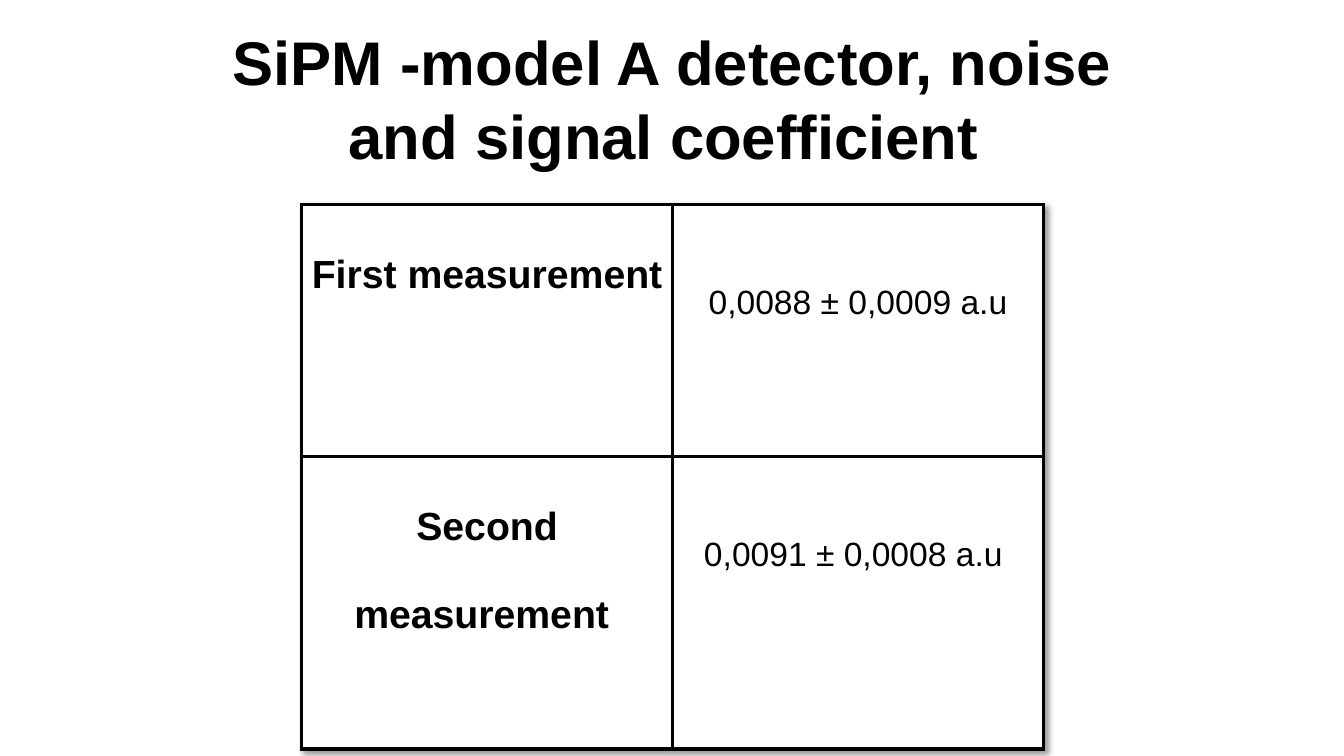
from lxml.etree import fromstring
from pptx import Presentation
from pptx.dml.color import RGBColor
from pptx.enum.text import MSO_ANCHOR, PP_ALIGN
from pptx.oxml.ns import nsdecls
from pptx.util import Inches, Pt

BLACK = RGBColor(0, 0, 0)
WHITE = RGBColor(255, 255, 255)

TITLE = "SiPM -model A detector, noise and signal coefficient "
ROWS = [
    ("First measurement", "0,0088 ± 0,0009 a.u"),
    ("Second measurement ", "0,0091 ± 0,0008 a.u "),
]
HEIGHTS = (2.5, 2.9)
WIDTH = 3.68


def write(frame, text, size, bold=False, space=1.0):
    para = frame.paragraphs[0]
    para.alignment = PP_ALIGN.CENTER
    para.line_spacing = space
    run = para.add_run()
    run.text = text
    run.font.name = "Arial"
    run.font.size = Pt(size)
    run.font.bold = bold
    run.font.color.rgb = BLACK


class Deck:
    def __init__(self):
        self.show = Presentation()
        self.show.slide_width = Inches(13.33)
        self.show.slide_height = Inches(7.5)
        self.slide = self.show.slides.add_slide(self.show.slide_layouts[5])

    def title(self, text, left, top, width, height):
        box = self.slide.shapes.title
        box.left, box.top = Inches(left), Inches(top)
        box.width, box.height = Inches(width), Inches(height)
        box.text_frame.word_wrap = True
        box.text_frame.vertical_anchor = MSO_ANCHOR.MIDDLE
        write(box.text_frame, text, 44, bold=True)

    def table(self, rows, left, top, width, heights):
        count = len(rows[0])
        frame = self.slide.shapes.add_table(
            len(rows), count, Inches(left), Inches(top),
            Inches(width * count), Inches(sum(heights)))
        grid = frame.table
        grid.first_row = grid.horz_banding = False
        self.shade(grid)
        for col in grid.columns:
            col.width = Inches(width)
        for row, height, texts in zip(grid.rows, heights, rows):
            row.height = Inches(height)
            label, value = row.cells
            write(label.text_frame, texts[0], 28, bold=True, space=2.0)
            write(value.text_frame, texts[1], 24, space=3.0)
            for cell in row.cells:
                cell.fill.solid()
                cell.fill.fore_color.rgb = WHITE
                cell.margin_left = cell.margin_right = Inches(0.09)
                self.border(cell)

    def border(self, cell):
        props = cell._tc.get_or_add_tcPr()
        for spot, side in enumerate(("lnL", "lnR", "lnT", "lnB")):
            props.insert(spot, fromstring(
                f'<a:{side} {nsdecls("a")} w="{Pt(3)}"><a:solidFill>'
                f'<a:srgbClr val="{BLACK}"/></a:solidFill></a:{side}>'))

    def shade(self, grid):
        grid._tbl.tblPr.insert(0, fromstring(
            f'<a:effectLst {nsdecls("a")}><a:outerShdw blurRad="50800" '
            f'dist="38100" dir="2700000" algn="tl" rotWithShape="0">'
            f'<a:srgbClr val="{BLACK}"><a:alpha val="40000"/></a:srgbClr>'
            f'</a:outerShdw></a:effectLst>'))

    def save(self):
        self.show.save("out.pptx")


def main():
    deck = Deck()
    deck.title(TITLE, 1.79, 0.18, 9.76, 1.58)
    deck.table(ROWS, 2.99, 2.03, WIDTH, HEIGHTS)
    deck.save()


if __name__ == "__main__":
    main()
